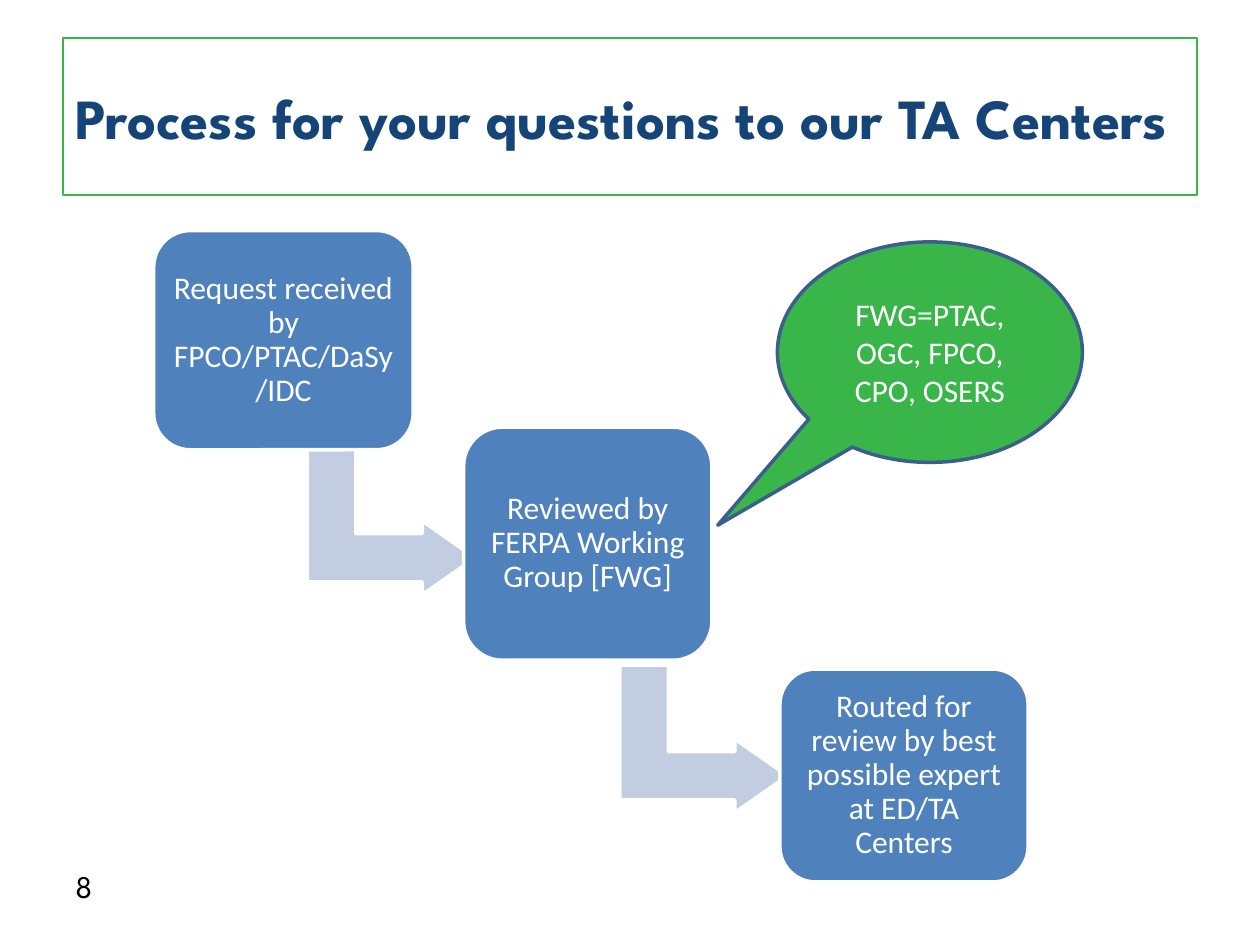
from dataclasses import dataclass
from typing import Optional

from pptx import Presentation
from pptx.dml.color import RGBColor
from pptx.enum.shapes import MSO_SHAPE
from pptx.enum.text import MSO_ANCHOR, PP_ALIGN
from pptx.util import Inches, Pt


@dataclass(frozen=True)
class Theme:
    navy: str = "154578"
    green: str = "39B54A"
    blue: str = "4F81BD"
    pale_blue: str = "C2CDE1"
    outline_blue: str = "3A5F8C"
    white: str = "FFFFFF"
    black: str = "000000"
    heading_font: str = "League Spartan"
    body_font: str = "Calibri"
    title_size: float = 32.4
    body_size: float = 18


@dataclass(frozen=True)
class Box:
    left: float
    top: float
    width: float
    height: float

    def lengths(self) -> tuple:
        return tuple(Inches(v) for v in (self.left, self.top, self.width, self.height))


@dataclass(frozen=True)
class Step:
    text: str
    box: Box


THEME = Theme()
ARROW_SIZE = (1.17, 1.33)
STEPS = [
    Step("Request received by FPCO/PTAC/DaSy/IDC", Box(1.22, 1.83, 2.06, 1.74)),
    Step("Reviewed by FERPA Working Group [FWG]", Box(3.68, 3.39, 1.97, 1.85)),
    Step("Routed for review by best possible expert at ED/TA Centers",
         Box(6.19, 5.31, 1.97, 1.69)),
]
ARROW_CORNERS = [(2.52, 3.47), (5, 5.2)]


def add_shape(slide, kind: MSO_SHAPE, box: Box, fill: Optional[str], line: str,
              line_width: float, adjustments: tuple = ()):
    shape = slide.shapes.add_shape(kind, *box.lengths())
    shape.shadow.inherit = False
    if fill:
        shape.fill.solid()
        shape.fill.fore_color.rgb = RGBColor.from_string(fill)
    else:
        shape.fill.background()
    shape.line.color.rgb = RGBColor.from_string(line)
    shape.line.width = Pt(line_width)
    for index, value in enumerate(adjustments):
        shape.adjustments[index] = value
    return shape


def write(shape, text: str, color: str, font: str = THEME.body_font,
          size: float = THEME.body_size, bold: bool = False,
          align: PP_ALIGN = PP_ALIGN.CENTER, spacing: float = 1.0,
          inset: Optional[float] = None) -> None:
    frame = shape.text_frame
    frame.word_wrap = True
    frame.vertical_anchor = MSO_ANCHOR.MIDDLE
    if inset is not None:
        for side in ("left", "top", "right", "bottom"):
            setattr(frame, f"margin_{side}", Inches(inset))
    paragraph = frame.paragraphs[0]
    paragraph.alignment = align
    paragraph.line_spacing = spacing
    run = paragraph.add_run()
    run.text = text
    for name, value in {"name": font, "size": Pt(size), "bold": bold}.items():
        setattr(run.font, name, value)
    run.font.color.rgb = RGBColor.from_string(color)


def add_step(slide, step: Step) -> None:
    card = add_shape(slide, MSO_SHAPE.ROUNDED_RECTANGLE, step.box, THEME.blue,
                     THEME.white, 2, (0.167,))
    write(card, step.text, THEME.white, spacing=0.9, inset=0.07)


def add_bent_arrow(slide, left: float, top: float) -> None:
    arrow = add_shape(slide, MSO_SHAPE.BENT_UP_ARROW, Box(left, top, *ARROW_SIZE),
                      THEME.pale_blue, THEME.white, 2, (0.328, 0.25, 0.358))
    arrow.rotation = 90


def main() -> None:
    deck = Presentation()
    deck.slide_width, deck.slide_height = Inches(10), Inches(7.5)
    slide = deck.slides.add_slide(deck.slide_layouts[6])

    page_number = slide.shapes.add_textbox(*Box(0.5, 6.83, 2.33, 0.4).lengths())
    write(page_number, "8", THEME.black, THEME.heading_font, align=PP_ALIGN.LEFT)

    title = add_shape(slide, MSO_SHAPE.RECTANGLE, Box(0.5, 0.3, 9, 1.25), None,
                      THEME.green, 1)
    write(title, "Process for your questions to our TA Centers", THEME.navy,
          THEME.heading_font, THEME.title_size, True, PP_ALIGN.LEFT)

    for corner in ARROW_CORNERS:
        add_bent_arrow(slide, *corner)
    for step in STEPS:
        add_step(slide, step)

    members = add_shape(slide, MSO_SHAPE.OVAL_CALLOUT, Box(6.17, 1.92, 2.42, 1.75),
                        THEME.green, THEME.outline_blue, 2, (-0.696, 0.785))
    write(members, "FWG=PTAC, OGC, FPCO, CPO, OSERS", THEME.white)

    deck.save("out.pptx")


if __name__ == "__main__":
    main()
